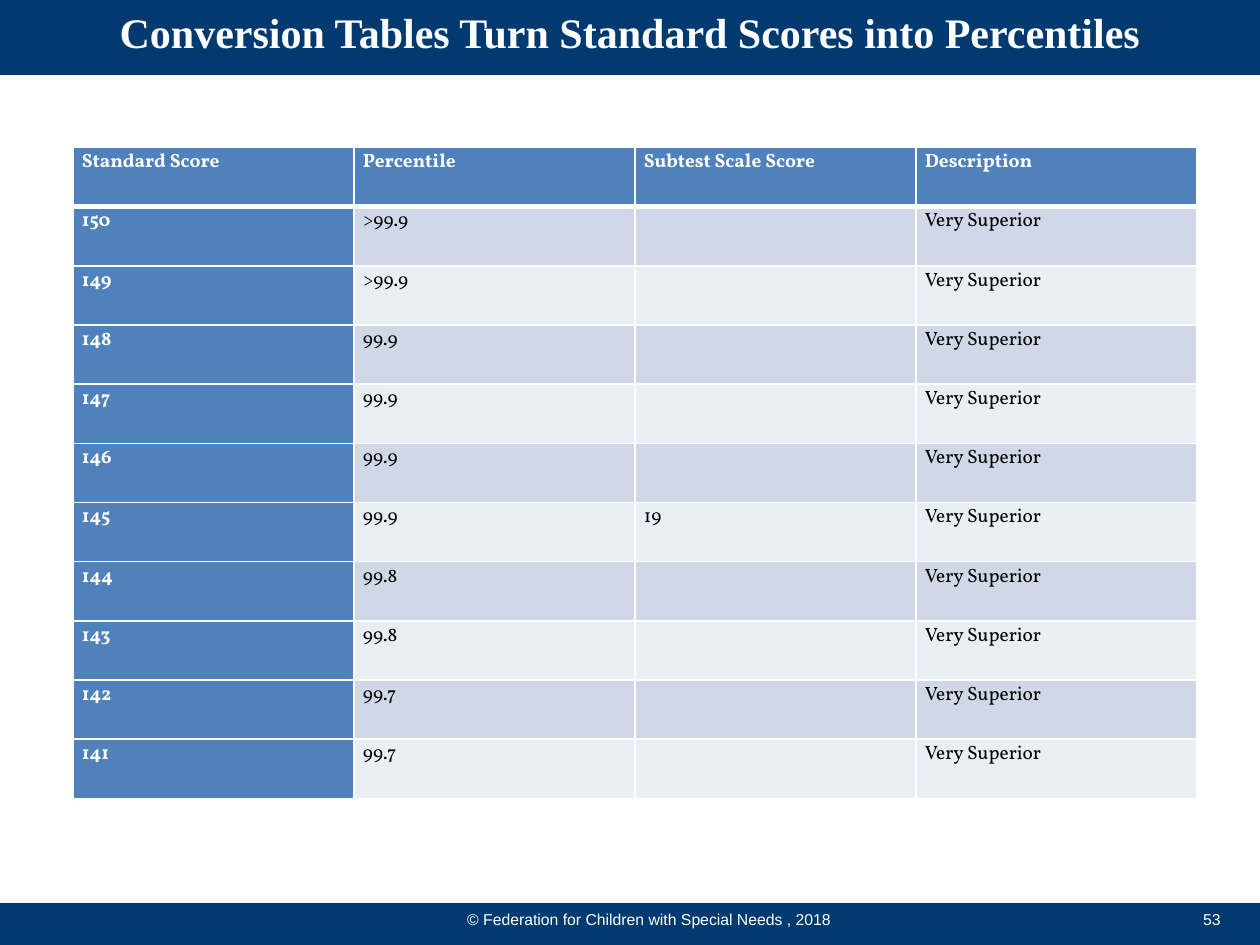
from dataclasses import dataclass

from lxml.etree import SubElement
from pptx import Presentation
from pptx.dml.color import RGBColor
from pptx.enum.shapes import MSO_SHAPE
from pptx.enum.text import PP_ALIGN
from pptx.oxml.ns import qn
from pptx.util import Inches, Pt


@dataclass(frozen=True)
class Theme:
    """Colours, fonts and type sizes of the slide."""
    navy: str = "003A70"
    blue: str = "4F81BD"
    dark: str = "D0D8E8"
    light: str = "E9EDF4"
    white: str = "FFFFFF"
    black: str = "000000"
    serif: str = "Times New Roman"
    sans: str = "Arial"
    body: str = "Vollkorn"
    title: int = 24
    cell: int = 11
    foot: int = 9


THEME = Theme()
HEADS = ["Standard Score", "Percentile", "Subtest Scale Score", "Description"]
RANKS = [">99.9"] * 2 + ["99.9"] * 4 + ["99.8"] * 2 + ["99.7"] * 2
SCALES = {145: "19"}
TOP_SCORE = 150


def style(para, font, size, color, bold=False):
    """Format every run of a paragraph."""
    for run in para.runs:
        run.font.name = font
        run.font.size = Pt(size)
        run.font.bold = bold
        run.font.color.rgb = RGBColor.from_string(color)


def add_band(slide, top, height):
    """Draw a full-width navy band."""
    band = slide.shapes.add_shape(
        MSO_SHAPE.RECTANGLE, 0, Inches(top), Inches(10), Inches(height))
    band.shadow.inherit = False
    band.fill.solid()
    band.fill.fore_color.rgb = RGBColor.from_string(THEME.navy)
    band.line.color.rgb = RGBColor.from_string(THEME.navy)
    band.line.width = Pt(2)


def add_text(slide, top, height, text):
    """Add a full-width text box and return its paragraph."""
    box = slide.shapes.add_textbox(0, Inches(top), Inches(10), Inches(height))
    box.text_frame.word_wrap = True
    box.text_frame.text = text
    return box.text_frame.paragraphs[0]


def add_title(slide, text):
    """Add the centred heading."""
    para = add_text(slide, 0, 0.5, text)
    para.alignment = PP_ALIGN.CENTER
    style(para, THEME.serif, THEME.title, THEME.white, True)


def add_foot(slide, note, page):
    """Add the footer, with its parts placed by tab stops."""
    para = add_text(slide, 7.17, 0.25, f"\t{note}\t{page}")
    tabs = SubElement(para._p.get_or_add_pPr(), qn("a:tabLst"))
    for stop in (3.61, 9.45):
        SubElement(tabs, qn("a:tab"), pos=str(Inches(stop)), algn="l")
    style(para, THEME.sans, THEME.foot, THEME.white)


def add_edge(cell, side, width):
    """Give one side of a cell a white border."""
    props = cell._tc.get_or_add_tcPr()
    line = SubElement(props, qn(f"a:ln{side}"), w=str(Pt(width)))
    fill = SubElement(line, qn("a:solidFill"))
    SubElement(fill, qn("a:srgbClr"), val=THEME.white)


def fill_cell(cell, text, row, col):
    """Write and format one table cell."""
    strong = row == 0 or col == 0
    thick = {(0, "B"), (1, "T")}
    for side in "LRTB":
        add_edge(cell, side, 3 if (row, side) in thick else 1)
    shade = THEME.blue if strong else THEME.dark if row % 2 else THEME.light
    cell.fill.solid()
    cell.fill.fore_color.rgb = RGBColor.from_string(shade)
    cell.margin_left = cell.margin_right = Inches(0.07)
    cell.margin_top = cell.margin_bottom = 0
    cell.text_frame.text = text
    para = cell.text_frame.paragraphs[0]
    para.line_spacing = 1.07
    color = THEME.white if strong else THEME.black
    style(para, THEME.body, THEME.cell, color, strong)


def add_grid(slide, rows):
    """Add the score table with even rows and columns."""
    grid = slide.shapes.add_table(
        len(rows), len(HEADS), Inches(0.58), Inches(1.17),
        Inches(8.92), Inches(0.47 * len(rows))).table
    for r, row in enumerate(rows):
        for c, text in enumerate(row):
            fill_cell(grid.cell(r, c), text, r, c)


def main():
    """Build and save the slide."""
    deck = Presentation()
    deck.slide_width, deck.slide_height = Inches(10), Inches(7.5)
    slide = deck.slides.add_slide(deck.slide_layouts[6])
    add_band(slide, 0, 0.58)
    add_band(slide, 7.18, 0.32)
    add_foot(slide, "© Federation for Children with Special Needs , 2018", 53)
    add_title(slide, "Conversion Tables Turn Standard Scores into Percentiles")
    rows = [HEADS]
    for step, rank in enumerate(RANKS):
        score = TOP_SCORE - step
        rows.append([str(score), rank, SCALES.get(score, ""), "Very Superior"])
    add_grid(slide, rows)
    deck.save("out.pptx")


if __name__ == "__main__":
    main()
